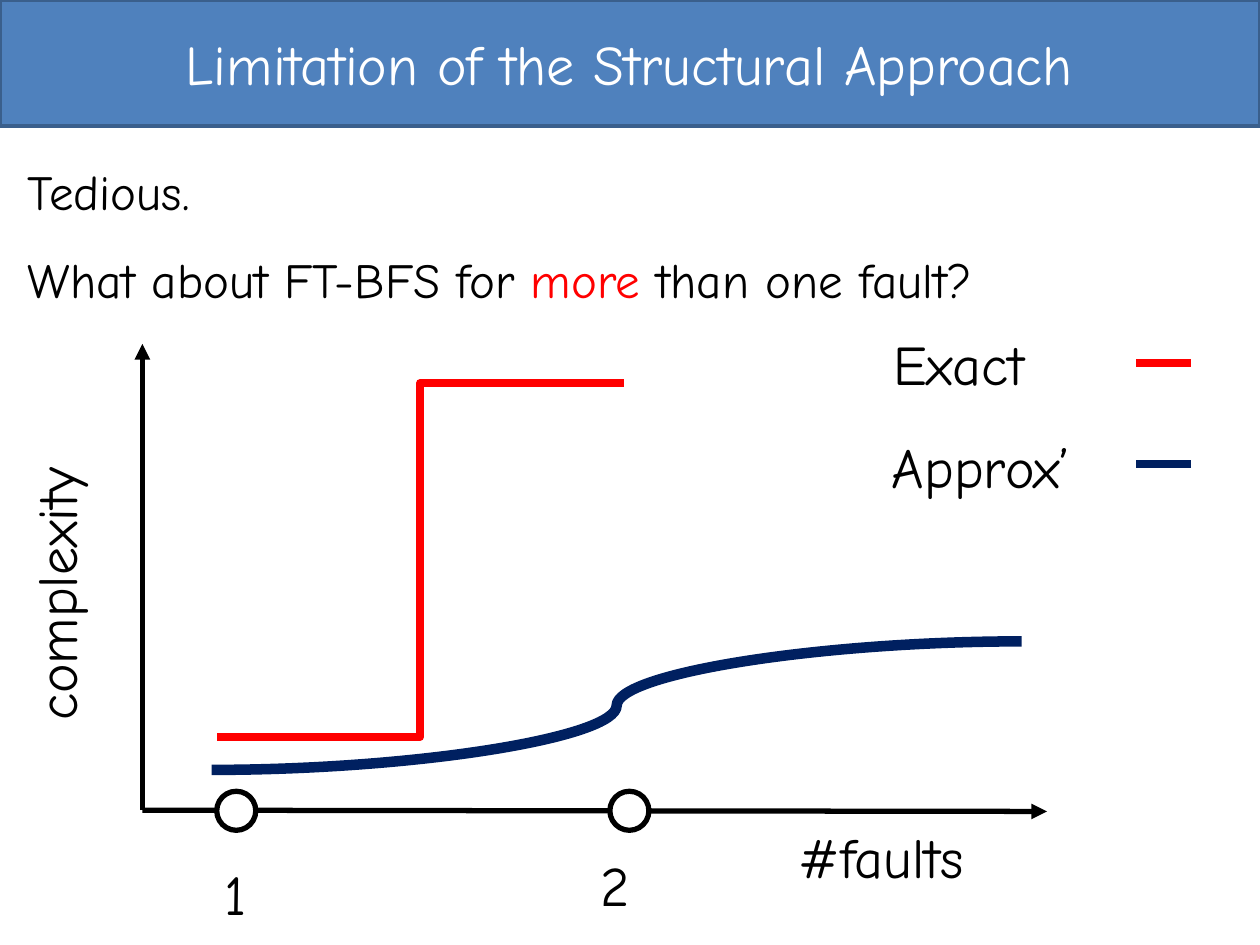
"""Build the slide on the limits of the structural approach."""
from lxml import etree
from pptx import Presentation
from pptx.dml.color import RGBColor
from pptx.enum.shapes import MSO_CONNECTOR, MSO_SHAPE
from pptx.enum.text import MSO_ANCHOR, MSO_AUTO_SIZE, PP_ALIGN
from pptx.oxml.ns import qn
from pptx.util import Inches, Pt

LINE, BENT, CURVE = MSO_CONNECTOR.STRAIGHT, MSO_CONNECTOR.ELBOW, MSO_CONNECTOR.CURVE
OVAL = MSO_SHAPE.OVAL
MIDDLE, TOP = MSO_ANCHOR.MIDDLE, MSO_ANCHOR.TOP
NO_FIT = MSO_AUTO_SIZE.NONE
LEFT, CENTER = PP_ALIGN.LEFT, PP_ALIGN.CENTER
FONT = "Comic Neue"
HEX = {"bar": "4F81BD", "edge": "3A5F8C", "white": "FFFFFF", "black": "000000",
       "exact": "FF0000", "approx": "002060"}
RGB = {name: RGBColor.from_string(code) for name, code in HEX.items()}


def style(par, size, color="black", align=LEFT):
    par.alignment = align
    par.font.name = FONT
    par.font.size = Pt(size)
    par.font.color.rgb = RGB[color]


def draw(kind, start, end, color, width):
    line = slide.shapes.add_connector(kind, *map(Inches, start + end))
    line.line.color.rgb = RGB[color]
    line.line.width = Pt(width)
    etree.SubElement(line._element.spPr, qn("a:effectLst"))
    return line


prs = Presentation()
prs.slide_width, prs.slide_height = Inches(10), Inches(7.5)
slide = prs.slides.add_slide(prs.slide_layouts[1])

title = slide.shapes.title
title.left, title.top, title.width, title.height = map(Inches, (0, 0, 10, 1))
title.fill.solid()
title.fill.fore_color.rgb = RGB["bar"]
title.line.color.rgb = RGB["edge"]
title.line.width = Pt(2)
title.text_frame.text = "Limitation of the Structural Approach"
title.text_frame.vertical_anchor = MIDDLE
style(title.text_frame.paragraphs[0], 32, "white", CENTER)

body = slide.placeholders[1]
body.left, body.top, body.width, body.height = map(Inches, (0.12, 1, 8.56, 1.51))
frame = body.text_frame
frame.text = "Tedious.\n"
frame.auto_size = NO_FIT
frame.word_wrap = False
frame.vertical_anchor = TOP
for text in ("What about FT-BFS for ", "more", " than one fault?"):
    run = frame.paragraphs[1].add_run()
    run.text = text
    if text == "more":
        run.font.color.rgb = RGB["exact"]
for par in frame.paragraphs:
    par.line_spacing = 1.5
    par.space_before = Pt(0)
    props = par._p.get_or_add_pPr()
    props.set("marL", "0")
    props.set("indent", "0")
    etree.SubElement(props, qn("a:buNone"))
    style(par, 28)

for tip in ((8.31, 6.44), (1.13, 2.73)):
    axis = draw(LINE, (1.13, 6.43), tip, "black", 3)
    etree.SubElement(axis.line._get_or_add_ln(), qn("a:tailEnd"), type="triangle")

for left in (1.72, 4.84):
    dot = slide.shapes.add_shape(OVAL, *map(Inches, (left, 6.28, 0.31, 0.31)))
    dot.shadow.inherit = False
    dot.fill.solid()
    dot.fill.fore_color.rgb = RGB["white"]
    dot.line.color.rgb = RGB["black"]
    dot.line.width = Pt(3)

draw(BENT, (4.95, 3.04), (1.72, 5.85), "exact", 4.5)
draw(CURVE, (8.11, 5.09), (1.68, 6.11), "approx", 6)
for color, y in (("exact", 2.88), ("approx", 3.68)):
    draw(LINE, (9.02, y), (9.45, y), color, 4.5)

labels = [
    ("complexity", -0.79, 4.27, 2.46, 270),
    ("#faults", 6.24, 6.48, 1.83, 0),
    ("1", 1.68, 6.77, 0.4, 0),
    ("2", 4.67, 6.7, 0.48, 0),
    ("Exact", 6.99, 2.57, 2.66, 0),
    ("Approx’", 6.98, 3.38, 2.66, 0),
]
for text, left, top, width, turn in labels:
    box = slide.shapes.add_textbox(*map(Inches, (left, top, width, 0.64)))
    box.rotation = turn
    box.text_frame.text = text
    box.text_frame.word_wrap = width == 2.66
    style(box.text_frame.paragraphs[0], 32)

prs.save("out.pptx")
